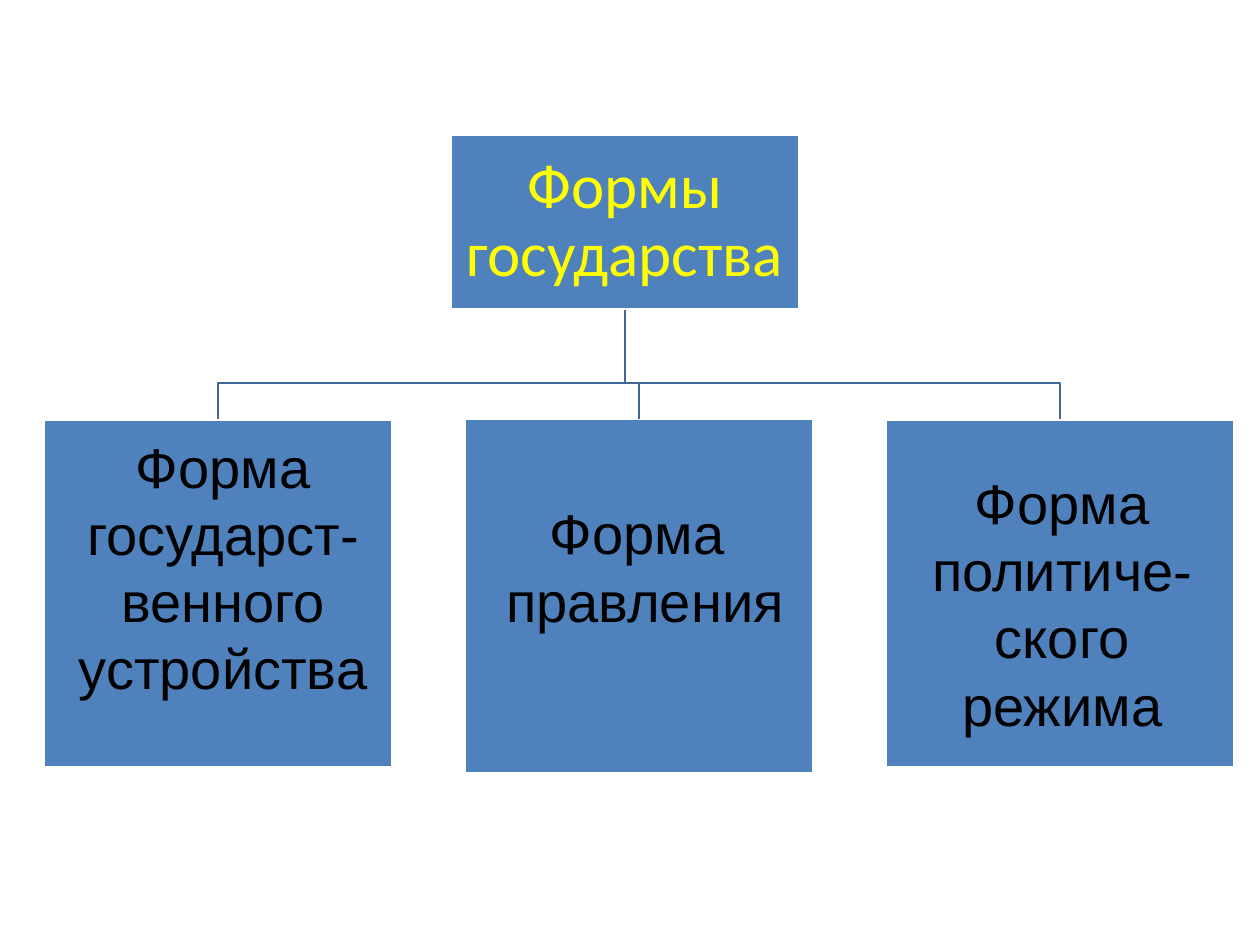
"""Build a slide with a tree of the forms of the state."""
from dataclasses import dataclass

from pptx import Presentation
from pptx.dml.color import RGBColor
from pptx.enum.shapes import MSO_SHAPE
from pptx.enum.text import MSO_ANCHOR, PP_ALIGN
from pptx.shapes.autoshape import Shape
from pptx.slide import Slide
from pptx.text.text import TextFrame
from pptx.util import Pt

BOX_FILL = "4F81BD"
BOX_BORDER = "FFFFFF"
BRANCH_COLOUR = "3F6797"
BOX_WIDTH = 198.5
BRANCH_TOP, BUS_TOP, FORM_TOP = 176.4, 218.9, 239.8
FORM_LEFT, FORM_STEP = 25.2, 240.7


@dataclass(frozen=True)
class Area:
    left: float
    top: float
    width: float
    height: float

    @property
    def centre(self) -> float:
        return self.left + self.width / 2

    def lengths(self) -> tuple:
        return Pt(self.left), Pt(self.top), Pt(self.width), Pt(self.height)


@dataclass(frozen=True)
class Form:
    label: str
    label_area: Area
    box_height: float = BOX_WIDTH


STATE = Area(257.8, 77, BOX_WIDTH, 99.4)
FORMS = [
    Form("Форма государст-венного устройства", Area(31, 243.4, 193, 162.7)),
    Form("Форма \nправления", Area(280.8, 281.5, 175.7, 85), 201.6),
    Form("Форма политиче-ского режима", Area(513.4, 264.2, 187.2, 162.7)),
]


def colour(code: str) -> RGBColor:
    return RGBColor.from_string(code)


def write(frame: TextFrame, text: str, *, font: str, size: float, ink: str,
          anchor: MSO_ANCHOR = MSO_ANCHOR.TOP, spacing: float = 1,
          inset: tuple = (7.2, 3.6)) -> None:
    frame.word_wrap = True
    frame.vertical_anchor = anchor
    frame.margin_left = frame.margin_right = Pt(inset[0])
    frame.margin_top = frame.margin_bottom = Pt(inset[1])
    frame.text = text
    for paragraph in frame.paragraphs:
        paragraph.alignment = PP_ALIGN.CENTER
        paragraph.line_spacing = spacing
        for run in paragraph.runs:
            run.font.name = font
            run.font.size = Pt(size)
            run.font.color.rgb = colour(ink)


def draw_box(slide: Slide, area: Area) -> Shape:
    box = slide.shapes.add_shape(MSO_SHAPE.RECTANGLE, *area.lengths())
    box.shadow.inherit = False
    box.fill.solid()
    box.fill.fore_color.rgb = colour(BOX_FILL)
    box.line.color.rgb = colour(BOX_BORDER)
    box.line.width = Pt(1)
    return box


def draw_branch(slide: Slide, start: float, end: float) -> None:
    builder = slide.shapes.build_freeform(Pt(start), Pt(BRANCH_TOP))
    bends = [(start, BUS_TOP), (end, BUS_TOP), (end, FORM_TOP)]
    builder.add_line_segments([(Pt(x), Pt(y)) for x, y in bends], close=False)
    branch = builder.convert_to_shape()
    branch.shadow.inherit = False
    branch.fill.background()
    branch.line.color.rgb = colour(BRANCH_COLOUR)
    branch.line.width = Pt(1)


def main() -> None:
    deck = Presentation()
    deck.slide_width, deck.slide_height = Pt(720), Pt(540)
    slide = deck.slides.add_slide(deck.slide_layouts[6])

    form_areas = [
        Area(FORM_LEFT + index * FORM_STEP, FORM_TOP, BOX_WIDTH, form.box_height)
        for index, form in enumerate(FORMS)
    ]
    for area in reversed(form_areas):
        draw_branch(slide, STATE.centre, area.centre)

    state_box = draw_box(slide, STATE)
    write(state_box.text_frame, "Формы государства", font="Calibri", size=36,
          ink="FFFF00", anchor=MSO_ANCHOR.MIDDLE, spacing=0.9, inset=(2, 2))

    for area in form_areas:
        draw_box(slide, area)
    for form in FORMS:
        label = slide.shapes.add_textbox(*form.label_area.lengths())
        write(label.text_frame, form.label, font="Arial", size=32, ink="000000")

    deck.save("out.pptx")


if __name__ == "__main__":
    main()
